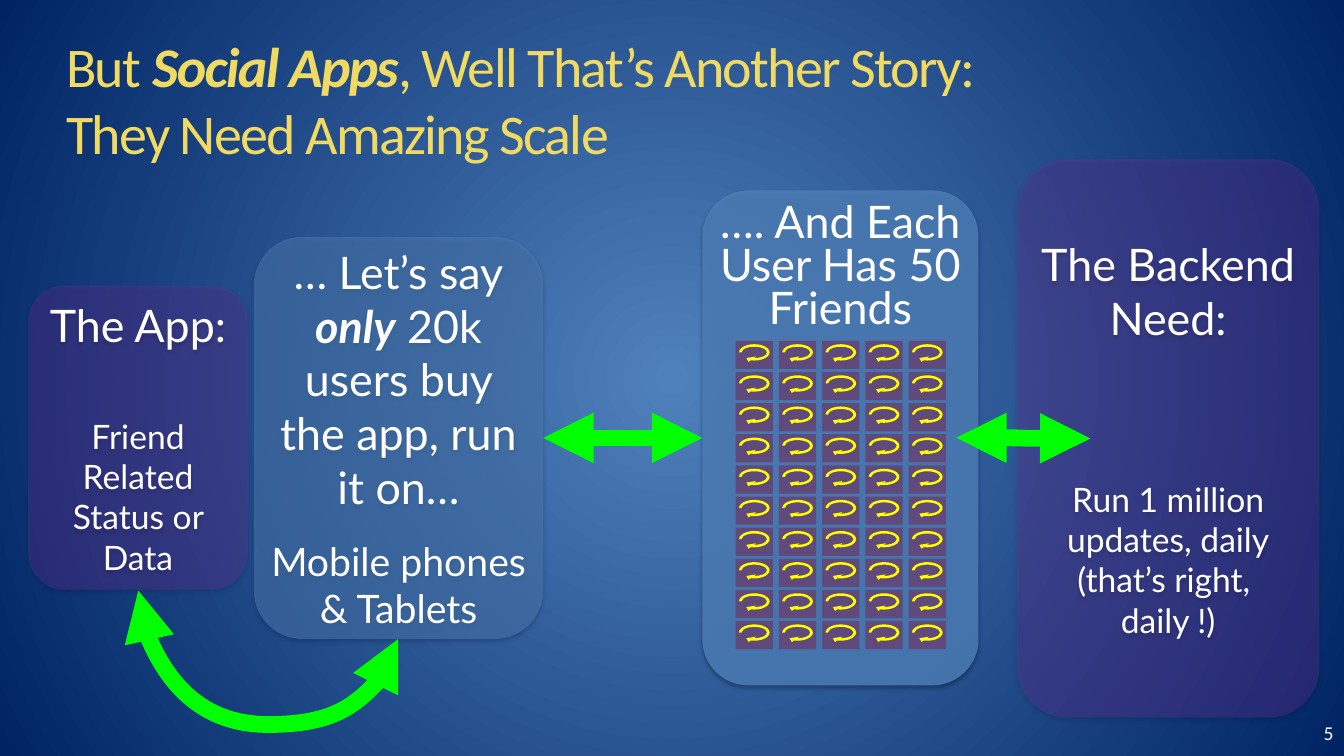
from pptx import Presentation
from pptx.dml.color import RGBColor
from pptx.enum.shapes import MSO_CONNECTOR, MSO_SHAPE
from pptx.enum.text import MSO_ANCHOR, MSO_AUTO_SIZE, PP_ALIGN
from pptx.oxml.ns import qn
from pptx.util import Cm, Pt
from lxml import etree

ROUND, RECT, LOOP = (MSO_SHAPE.ROUNDED_RECTANGLE, MSO_SHAPE.RECTANGLE,
                     MSO_SHAPE.CIRCULAR_ARROW)
CURVE = MSO_CONNECTOR.CURVE
TOP, MIDDLE = MSO_ANCHOR.TOP, MSO_ANCHOR.MIDDLE
LEFT, CENTER, RIGHT = PP_ALIGN.LEFT, PP_ALIGN.CENTER, PP_ALIGN.RIGHT

WHITE = RGBColor(0xFF, 0xFF, 0xFF)
GOLD = RGBColor(0xF1, 0xDA, 0x61)
BLUE = RGBColor(0x4F, 0x81, 0xBD)
NAVY = RGBColor(0x00, 0x24, 0x63)
PURPLE = RGBColor(0x70, 0x30, 0xA0)
PLUM = RGBColor(0x60, 0x4A, 0x7B)
GREEN = RGBColor(0x00, 0xFF, 0x00)
YELLOW = RGBColor(0xFF, 0xFF, 0x00)

# Paragraphs are (text, size, space before); *stars* mark bold italic words.
TITLE = [("But *Social Apps*, Well That’s Another Story:", 40, 0),
         ("They Need Amazing Scale", 40, 0)]
# name: (left, top, width, height), fill, opacity %, anchor, line spacing, text
PANELS = {
    "backend": ((25.63, 4.01, 7.62, 14.07), PURPLE, 30, MIDDLE, 1,
                [("The Backend Need:", 32, 0),
                 ("Run 1 million updates, daily", 24, 96),
                 ("(that’s right, ", 24, 0),
                 ("daily !)", 24, 0)]),
    "users": ((6.4, 5.97, 7.29, 10.13), BLUE, 50, MIDDLE, 1,
              [("… Let’s say* only* 20k users buy the app, run it on…", 32, 0),
               ("Mobile phones", 28, 16.8),
               ("& Tablets", 28, 0)]),
    "app": ((0.71, 7.19, 5.54, 7.67), PURPLE, 30, MIDDLE, 1,
            [("The App:", 32, 0),
             ("Friend Related Status or Data", 24, 45.6)]),
    "friends": ((17.7, 4.8, 6.96, 12.47), BLUE, 80, TOP, 0.8,
                [("…. And Each User Has 50 Friends", 32, 0)]),
}
COLS, ROWS = 5, 10
GRID_X, GRID_Y = 18.54, 8.59
STEP_X, STEP_Y = 1.09, 7.06 / (ROWS - 1)
TILE_W, TILE_H, LOOP_H = 0.94, 0.71, 0.58
LOOP_ADJ = (0.11, 22.81, 63.82, 108, 0.2)


def place(*lengths):
    return [Cm(n) for n in lengths]


def add(node, tag, **attrs):
    return etree.SubElement(node, qn(tag), {k: str(v) for k, v in attrs.items()})


def write(frame, paras, font="Lato", color=WHITE, align=CENTER, anchor=TOP,
          inset=(0, 0), spacing=None, track=None):
    frame.word_wrap = True
    frame.auto_size = MSO_AUTO_SIZE.NONE
    frame.vertical_anchor = anchor
    frame.margin_left = frame.margin_right = Cm(inset[0])
    frame.margin_top = frame.margin_bottom = Cm(inset[1])
    for i, (text, size, before) in enumerate(paras):
        para = frame.add_paragraph() if i else frame.paragraphs[0]
        para.alignment = align
        if spacing:
            para.line_spacing = spacing
        if before:
            para.space_before = Pt(before)
        for j, part in enumerate(text.split("*")):
            run = para.add_run()
            run.text = part
            run.font.name, run.font.size = font, Pt(size)
            run.font.color.rgb = color
            run.font.bold = run.font.italic = j % 2 == 1
            if track:
                run._r.get_or_add_rPr().set("spc", str(track))


def shape(home, kind, box, color):
    item = home.shapes.add_shape(kind, *place(*box))
    item.fill.solid()
    item.fill.fore_color.rgb = color
    item.line.fill.background()
    item.shadow.inherit = False
    return item


def panel(slide, box, color, alpha, anchor, spacing, paras):
    """Add a see-through rounded box with a soft shadow and text."""
    item = shape(slide, ROUND, box, color)
    props = item._element.spPr
    add(props.find(".//" + qn("a:srgbClr")), "a:alpha", val=alpha * 1000)
    glow = add(props.find(qn("a:effectLst")), "a:outerShdw", blurRad=40000,
               dist=23000, dir=5400000, rotWithShape=0)
    add(add(glow, "a:srgbClr", val="000000"), "a:alpha", val=35000)
    write(item.text_frame, paras, anchor=anchor, spacing=spacing)
    return item


def arrow(slide, *ends):
    """Add a thick green curve with a head at both ends."""
    item = slide.shapes.add_connector(CURVE, *place(*ends))
    item.line.color.rgb = GREEN
    item.line.width = Pt(12)
    line = item.line._get_or_add_ln()
    add(line, "a:headEnd", type="triangle")
    add(line, "a:tailEnd", type="triangle")
    add(item._element.spPr, "a:effectLst")
    return item


def backdrop(slide):
    fill = slide.background.fill
    fill.gradient()
    for stop, color, at in zip(fill.gradient_stops, (BLUE, NAVY), (0, 1)):
        stop.color.rgb, stop.position = color, at
    grad = slide._element.find(".//" + qn("a:gradFill"))
    grad.remove(grad.find(qn("a:lin")))
    add(add(grad, "a:path", path="circle"), "a:fillToRect",
        l=50000, t=50000, r=50000, b=50000)


def main():
    deck = Presentation()
    deck.slide_width, deck.slide_height = place(33.87, 19.05)
    slide = deck.slides.add_slide(deck.slide_layouts[5])
    backdrop(slide)

    title = slide.shapes.title
    title.left, title.top, title.width, title.height = place(1.42, 0.66, 31.29, 2.11)
    write(title.text_frame, TITLE, font="Calibri", color=GOLD, align=LEFT,
          inset=(0.25, 0.13), track=-120)

    boxes = {name: panel(slide, *spec) for name, spec in PANELS.items()}

    # The U-shaped curve is a quarter-turned connector bulging below both boxes.
    bend = arrow(slide, 6.15, 12.22, 7.37, 18.77)
    frame = bend._element.spPr.find(qn("a:xfrm"))
    frame.set("rot", "16200000")
    frame.set("flipH", "1")
    geom = bend._element.spPr.find(qn("a:prstGeom"))
    add(geom.find(qn("a:avLst")), "a:gd", name="adj1", fmla="val 276400")

    link = arrow(slide, 13.69, 11.03, 17.7, 11.03)
    link.begin_connect(boxes["users"], 3)
    link.end_connect(boxes["friends"], 1)

    cells = [(GRID_X + c * STEP_X, GRID_Y + r * STEP_Y)
             for c in range(COLS) for r in range(ROWS)]
    tiles = slide.shapes.add_group_shape()
    for x, y in cells:
        shape(tiles, RECT, (x, y, TILE_W, TILE_H), PLUM)
    arrow(slide, 24.1, 11.03, 27.48, 11.05)
    loops = slide.shapes.add_group_shape()
    for x, y in cells:
        loop = shape(loops, LOOP, (x, y, TILE_W, LOOP_H), YELLOW)
        for i, value in enumerate(LOOP_ADJ):
            loop.adjustments[i] = value

    page = slide.shapes.add_textbox(*place(32.49, 18.03, 1.37, 1.02))
    write(page.text_frame, [("5", 14, 0)], font="Calibri", align=RIGHT,
          inset=(0.25, 0.13))
    deck.save("out.pptx")


if __name__ == "__main__":
    main()
